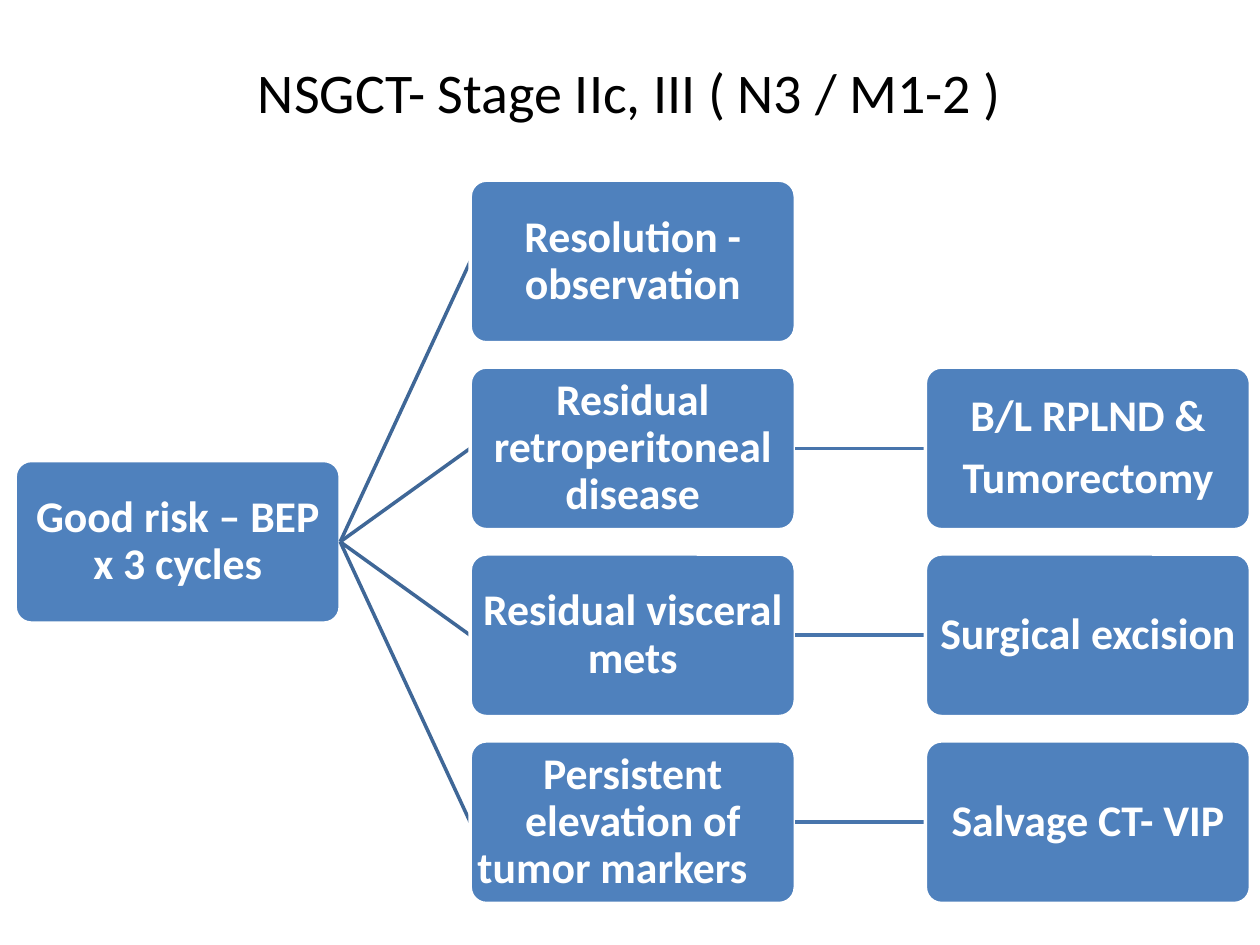
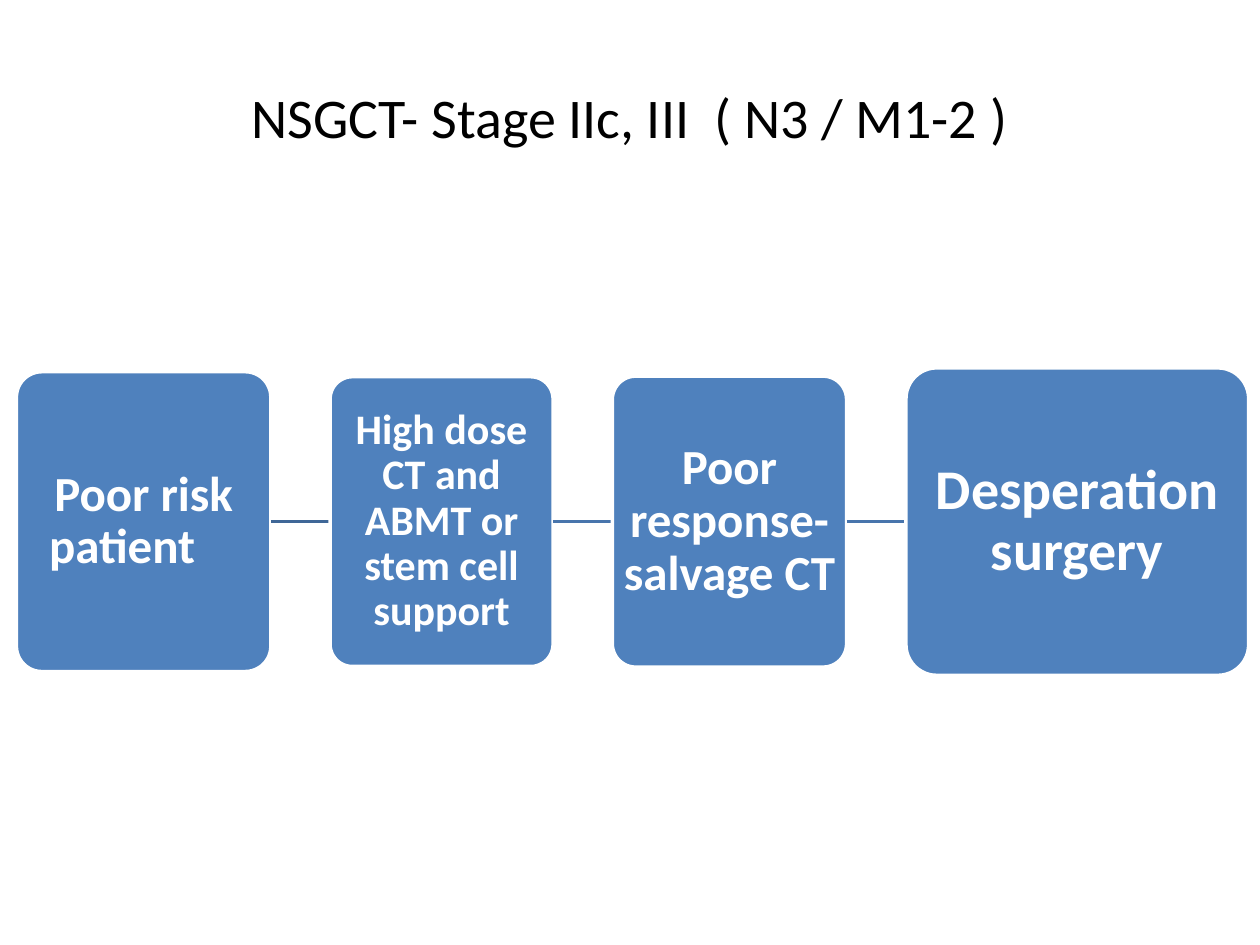
from pptx import Presentation
from pptx.dml.color import RGBColor
from pptx.enum.shapes import MSO_CONNECTOR as Line, MSO_SHAPE as Form
from pptx.enum.text import MSO_ANCHOR as Anchor, PP_ALIGN as Align
from pptx.oxml.ns import qn
from pptx.util import Inches as In, Pt
from lxml.etree import SubElement as Sub

# Shared look
hue = RGBColor.from_string
FONT, FILL, WHITE, BLACK = "Calibri", "4F81BD", "FFFFFF", "000000"
DARK, MID = "3F6797", "4875AC"
EDGE = 2


def box(page, x, y, w, h, size, *lines):
    """Rounded box with centred bold text."""
    node = page.shapes.add_shape(Form.ROUNDED_RECTANGLE, In(x), In(y), In(w), In(h))
    node.adjustments[0] = 0.1
    node.shadow.inherit = False
    node.fill.solid()
    node.fill.fore_color.rgb = hue(FILL)
    node.line.color.rgb = hue(WHITE)
    node.line.width = Pt(EDGE)
    frame = node.text_frame
    frame.word_wrap = True
    frame.vertical_anchor = Anchor.MIDDLE
    frame.margin_left = frame.margin_right = In(0.02)
    frame.margin_top = frame.margin_bottom = In(0.02)
    for i, line in enumerate(lines):
        para = frame.add_paragraph() if i else frame.paragraphs[0]
        para.alignment = Align.CENTER
        para.line_spacing = 0.9
        para.space_before = Pt(0.35 * size if i else 0)
        run = para.add_run()
        run.text = line
        run.font.name, run.font.size, run.font.bold = FONT, Pt(size), True
        run.font.color.rgb = hue(WHITE)


def link(page, x1, y1, x2, y2, tint):
    """Plain line between two boxes."""
    wire = page.shapes.add_connector(Line.STRAIGHT, In(x1), In(y1), In(x2), In(y2))
    wire.line.color.rgb = hue(tint)
    wire.line.width = Pt(EDGE)
    Sub(wire._element.find(qn("p:spPr")), qn("a:effectLst"))


deck = Presentation()
deck.slide_width, deck.slide_height = In(10), In(7.5)

# Slides with their titles
pages = []
for text, high in (
    ("NSGCT- Stage IIc, III ( N3 / M1-2 )", 0.85),
    ("NSGCT- Stage IIc, III  ( N3 / M1-2 )", 1.25),
):
    page = deck.slides.add_slide(deck.slide_layouts[5])
    head = page.shapes.title
    head.left, head.top, head.width, head.height = In(0.5), In(0.3), In(9), In(high)
    head.text_frame.vertical_anchor = Anchor.MIDDLE
    para = head.text_frame.paragraphs[0]
    para.alignment = Align.CENTER
    run = para.add_run()
    run.text = text
    run.font.name, run.font.size = FONT, Pt(32)
    run.font.color.rgb = hue(BLACK)
    pages.append(page)
tree, chain = pages

# Slide 1: good risk tree on a grid of three columns and four rows
W, H = 2.58, 1.29
cols = [0.12 + 1.4 * W * i for i in range(3)]
rows = [1.43 + 1.15 * H * i for i in range(4)]
root = (rows[0] + rows[-1]) / 2
box(tree, cols[0], root, W, H, 25, "Good risk – BEP x 3 cycles")
paths = [
    ("Resolution - observation", ()),
    ("Residual retroperitoneal disease", ("B/L RPLND &", "Tumorectomy")),
    ("Residual visceral mets", ("Surgical excision",)),
    ("Persistent elevation of tumor markers\t", ("Salvage CT- VIP",)),
]
for top, (state, care) in zip(rows, paths):
    mid = top + H / 2
    link(tree, cols[0] + W, root + H / 2, cols[1], mid, DARK)
    box(tree, cols[1], top, W, H, 25, state)
    if care:
        link(tree, cols[1] + W, mid, cols[2], mid, MID)
        box(tree, cols[2], top, W, H, 25, *care)

# Slide 2: poor risk chain, boxes centred on one axis with equal gaps
AXIS, GAP = 4.14, 0.47
left = 0.13
steps = [
    (2.02, 2.38, 28, "Poor risk patient\t", None),
    (1.77, 2.3, 24, "High dose CT and ABMT or stem cell support", DARK),
    (1.86, 2.31, 28, "Poor response- salvage CT", MID),
    (2.72, 2.44, 32, "Desperation surgery", MID),
]
for wide, high, size, text, tint in steps:
    if tint:
        link(chain, left - GAP, AXIS, left, AXIS, tint)
    box(chain, left, AXIS - high / 2, wide, high, size, text)
    left += wide + GAP

deck.save("out.pptx")
